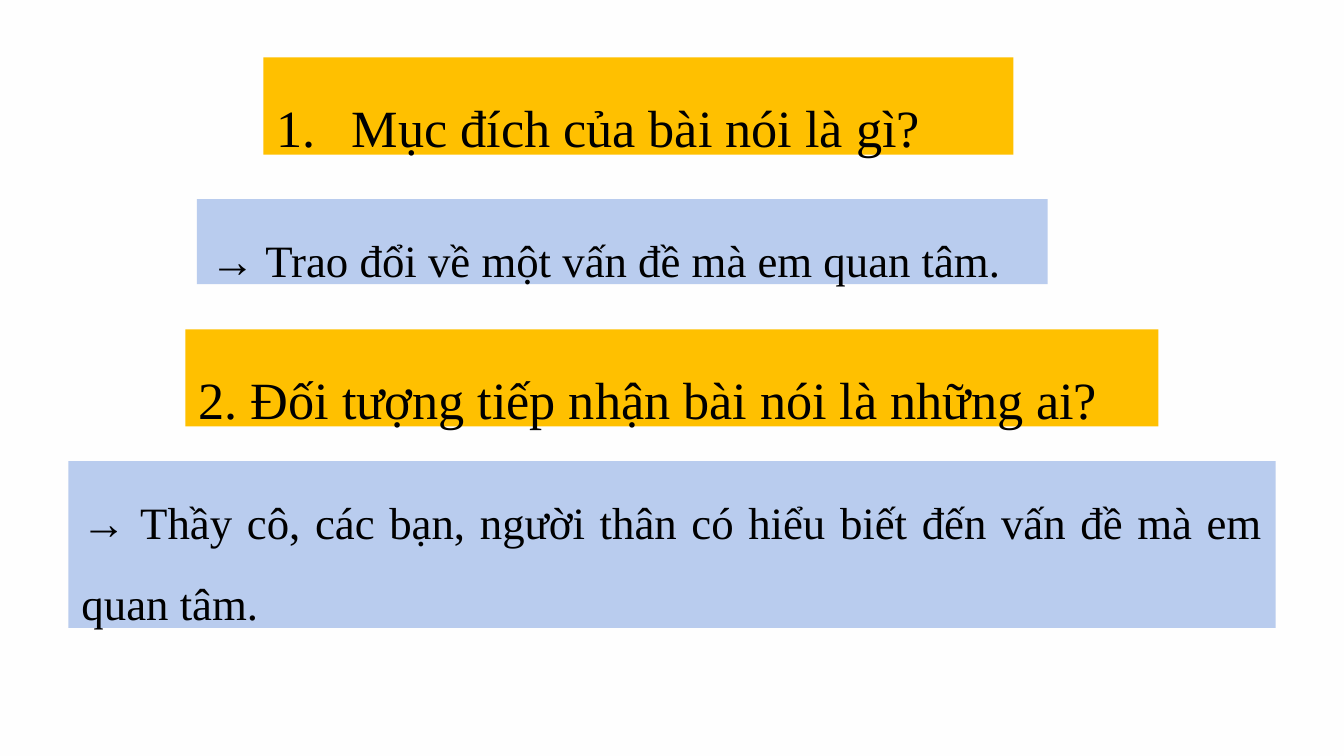
from dataclasses import dataclass

from lxml.etree import SubElement
from pptx import Presentation
from pptx.dml.color import RGBColor
from pptx.enum.shapes import MSO_SHAPE
from pptx.enum.text import MSO_ANCHOR, MSO_AUTO_SIZE, PP_ALIGN
from pptx.oxml.ns import qn
from pptx.slide import Slide
from pptx.util import Inches, Pt


@dataclass(frozen=True)
class Theme:
    background: RGBColor = RGBColor.from_string("FEFEFE")
    question: RGBColor = RGBColor.from_string("FFC000")
    answer: RGBColor = RGBColor.from_string("B9CCEE")
    text: RGBColor = RGBColor.from_string("000000")
    font: str = "Times New Roman"
    question_size: int = 28
    answer_size: int = 24
    line_spacing: float = 1.5
    number_indent: float = 0.56


@dataclass(frozen=True)
class Panel:
    text: str
    left: float
    top: float
    width: float
    height: float
    is_answer: bool = False
    numbered: bool = False


THEME = Theme()
WIDTH = Inches(10)
HEIGHT = WIDTH * 9 // 16

PANELS = [
    Panel("Mục đích của bài nói là gì? ", 19.6, 7.6, 55.8, 12.84, numbered=True),
    Panel("2. Đối tượng tiếp nhận bài nói là những ai? ", 13.8, 43.58, 72.4, 12.84),
    Panel("→ Trao đổi về một vấn đề mà em quan tâm. ",
          14.66, 26.35, 63.3, 11.24, is_answer=True),
    Panel("→ Thầy cô, các bạn, người thân có hiểu biết đến vấn đề mà em quan tâm.",
          5.08, 61.02, 89.84, 22.06, is_answer=True),
]


def share(percent: float, whole: int) -> int:
    return round(whole * percent / 100)


def add_number(p, indent: float) -> None:
    pPr = p._p.get_or_add_pPr()
    pPr.set("marL", str(Inches(indent)))
    pPr.set("indent", str(-Inches(indent)))
    color = SubElement(pPr, qn("a:buClr"))
    SubElement(color, qn("a:srgbClr"), val=str(THEME.text))
    SubElement(pPr, qn("a:buFont"), typeface="+mj-lt")
    SubElement(pPr, qn("a:buAutoNum"), type="arabicPeriod")


def draw_panel(s: Slide, panel: Panel) -> None:
    sp = s.shapes.add_shape(
        MSO_SHAPE.RECTANGLE,
        share(panel.left, WIDTH), share(panel.top, HEIGHT),
        share(panel.width, WIDTH), share(panel.height, HEIGHT))
    sp.shadow.inherit = False
    sp.fill.solid()
    sp.fill.fore_color.rgb = THEME.answer if panel.is_answer else THEME.question
    sp.line.fill.background()

    tf = sp.text_frame
    tf.text = panel.text
    tf.word_wrap = True
    tf.auto_size = MSO_AUTO_SIZE.SHAPE_TO_FIT_TEXT
    tf.vertical_anchor = MSO_ANCHOR.TOP
    p = tf.paragraphs[0]
    if panel.numbered:
        add_number(p, THEME.number_indent)
    p.alignment = PP_ALIGN.JUSTIFY
    p.line_spacing = THEME.line_spacing
    r = p.runs[0]
    r.font.name = THEME.font
    r.font.size = Pt(THEME.answer_size if panel.is_answer else THEME.question_size)
    r.font.color.rgb = THEME.text


def main() -> None:
    prs = Presentation()
    prs.slide_width, prs.slide_height = WIDTH, HEIGHT
    s = prs.slides.add_slide(prs.slide_layouts[6])
    s.background.fill.solid()
    s.background.fill.fore_color.rgb = THEME.background
    for panel in PANELS:
        draw_panel(s, panel)
    prs.save("out.pptx")


if __name__ == "__main__":
    main()
